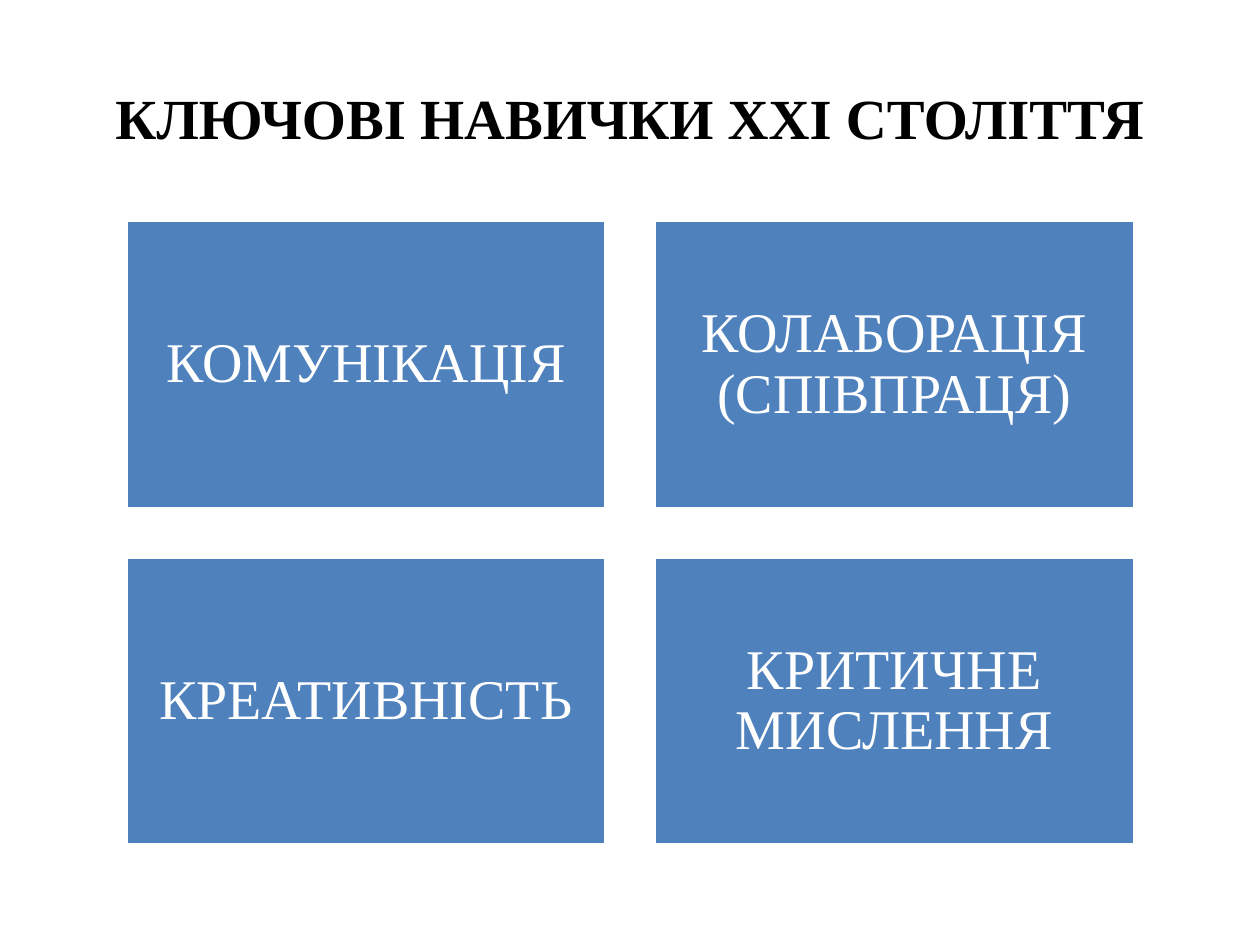
from dataclasses import dataclass

from pptx import Presentation
from pptx.dml.color import RGBColor
from pptx.enum.shapes import MSO_SHAPE
from pptx.enum.text import MSO_ANCHOR, PP_ALIGN
from pptx.util import Cm, Pt

FONT = "Times New Roman"
BLACK, WHITE, BLUE = "000000", "FFFFFF", "4F81BD"

GRID_LEFT, GRID_TOP = 2.54, 4.45
CARD_WIDTH, CARD_HEIGHT = 9.68, 5.81
CARD_GAP = 0.97
CARD_INSET = 0.34


@dataclass
class SkillCard:
    text: str
    column: int
    row: int


SKILL_CARDS = [
    SkillCard("КОМУНІКАЦІЯ", 0, 0),
    SkillCard("КОЛАБОРАЦІЯ (СПІВПРАЦЯ)", 1, 0),
    SkillCard("КРЕАТИВНІСТЬ", 0, 1),
    SkillCard("КРИТИЧНЕ МИСЛЕННЯ", 1, 1),
]


def color(hex_value: str) -> RGBColor:
    return RGBColor.from_string(hex_value)


def write_text(shape, text: str, *, size: float, hex_color: str,
               bold: bool = False, line_spacing: float = 1.0,
               inset: float | None = None) -> None:
    """Fill the shape with one centred paragraph; inset is in centimetres."""
    frame = shape.text_frame
    frame.word_wrap = True
    frame.vertical_anchor = MSO_ANCHOR.MIDDLE
    if inset is not None:
        frame.margin_left = frame.margin_right = Cm(inset)
        frame.margin_top = frame.margin_bottom = Cm(inset)
    paragraph = frame.paragraphs[0]
    paragraph.alignment = PP_ALIGN.CENTER
    paragraph.line_spacing = line_spacing
    run = paragraph.add_run()
    run.text = text
    run.font.name = FONT
    run.font.size = Pt(size)
    run.font.bold = bold
    run.font.color.rgb = color(hex_color)


def draw_card(slide, card: SkillCard) -> None:
    left = GRID_LEFT + card.column * (CARD_WIDTH + CARD_GAP)
    top = GRID_TOP + card.row * (CARD_HEIGHT + CARD_GAP)
    shape = slide.shapes.add_shape(MSO_SHAPE.RECTANGLE, Cm(left), Cm(top),
                                   Cm(CARD_WIDTH), Cm(CARD_HEIGHT))
    shape.shadow.inherit = False
    shape.fill.solid()
    shape.fill.fore_color.rgb = color(BLUE)
    shape.line.color.rgb = color(WHITE)
    shape.line.width = Pt(2)
    write_text(shape, card.text, size=32, hex_color=WHITE,
               line_spacing=0.9, inset=CARD_INSET)


def main() -> None:
    presentation = Presentation()
    presentation.slide_width, presentation.slide_height = Cm(25.4), Cm(19.05)
    slide = presentation.slides.add_slide(
        presentation.slide_layouts.get_by_name("Title Only"))

    title = slide.shapes.title
    title.left, title.top = Cm(1.27), Cm(0.76)
    title.width, title.height = Cm(22.86), Cm(3.18)
    write_text(title, "КЛЮЧОВІ НАВИЧКИ ХХІ СТОЛІТТЯ", size=32.4,
               hex_color=BLACK, bold=True)

    for card in SKILL_CARDS:
        draw_card(slide, card)

    presentation.save("out.pptx")


if __name__ == "__main__":
    main()
